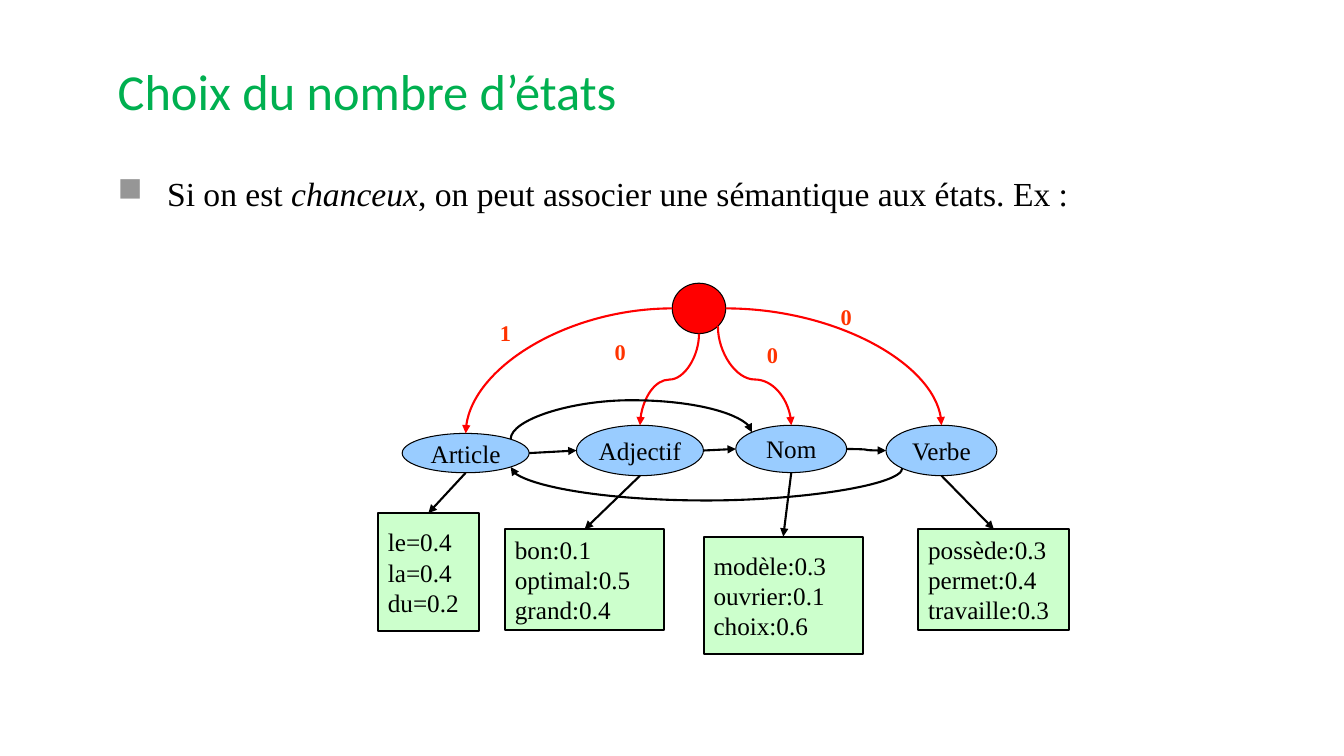
"""Build a slide showing a hidden Markov model whose states are parts of speech."""
from dataclasses import dataclass

from lxml.etree import SubElement
from pptx import Presentation
from pptx.dml.color import RGBColor
from pptx.enum.shapes import MSO_CONNECTOR, MSO_SHAPE
from pptx.enum.text import MSO_ANCHOR, MSO_AUTO_SIZE, PP_ALIGN
from pptx.oxml.ns import qn
from pptx.shapes.autoshape import Shape
from pptx.shapes.connector import Connector
from pptx.shapes.shapetree import SlideShapes
from pptx.text.text import TextFrame
from pptx.util import Pt


@dataclass(frozen=True)
class Theme:
    """Colours, fonts and type sizes."""
    title: str = "00B050"
    text: str = "000000"
    bullet: str = "969696"
    state: str = "99CCFF"
    start: str = "FF0000"
    emission: str = "CCFFCC"
    label: str = "FF3300"
    head_font: str = "Calibri"
    body_font: str = "Times New Roman"
    title_size: float = 36
    body_size: float = 24
    node_size: float = 18
    label_size: float = 16
    thin: float = 0.75
    thick: float = 1.5


@dataclass(frozen=True)
class Box:
    """A rectangle in points, with its text."""
    x: float
    y: float
    w: float
    h: float
    text: str = ""

    def at(self, fx: float, fy: float) -> tuple[float, float]:
        """Return the point at the given fractions of width and height."""
        return self.x + fx * self.w, self.y + fy * self.h


@dataclass(frozen=True)
class Curve:
    """A curved arrow; bend is the height it turns at, if it leaves vertically."""
    begin: tuple[float, float]
    end: tuple[float, float]
    color: str
    rot: int = 0
    flip: str = ""
    prst: str = "curvedConnector3"
    bend: float | None = None


THEME = Theme()
TOP, LEFT, BOTTOM, RIGHT = (0.5, 0), (0, 0.5), (0.5, 1), (1, 0.5)
NEAR, FAR = 0.146, 0.854

TITLE = Box(77, 37.4, 715.7, 60.5, "Choix du nombre d’états")
BODY = Box(77, 120.2, 762.5, 36.7)
BODY_RUNS = (("Si on est ", False), ("chanceux", True),
             (", on peut associer une sémantique aux états. Ex :", False))
START = Box(480.2, 202.3, 38.2, 36)
ARTICLE = Box(287.3, 309.6, 90.7, 28.1, "Article")
ADJECTIF = Box(411.8, 303.8, 90.7, 36, "Adjectif")
NOM = Box(525.6, 303.8, 79.2, 33.8, "Nom")
VERBE = Box(632.9, 303.8, 79.2, 36, "Verbe")
EMISSIONS = (
    (ARTICLE, Box(270, 366.5, 72, 84.2, "le=0.4\vla=0.4\vdu=0.2")),
    (ADJECTIF, Box(360.7, 378, 113.8, 72, "bon:0.1\voptimal:0.5\vgrand:0.4")),
    (NOM, Box(502.6, 383.3, 113.8, 84.2, "modèle:0.3\nouvrier:0.1\vchoix:0.6")),
    (VERBE, Box(655.9, 378, 108, 72, "possède:0.3\vpermet:0.4\ntravaille:0.3")),
)
LABELS = tuple(Box(x, y, 22.3, 26.6, text) for x, y, text in (
    (349.9, 224.6, "1"), (432, 238.3, "0"), (540.7, 239.8, "0"), (593.3, 213.1, "0")))
CURVES = (
    Curve(START.at(*RIGHT), VERBE.at(*TOP), THEME.start, prst="curvedConnector2"),
    Curve(START.at(*LEFT), ARTICLE.at(*TOP), THEME.start, 180, "V", "curvedConnector2"),
    Curve(START.at(*BOTTOM), ADJECTIF.at(*TOP), THEME.start, 90, bend=271.1),
    Curve(START.at(FAR, FAR), NOM.at(*TOP), THEME.start, 270, "H", bend=271.1),
    Curve(ARTICLE.at(FAR, NEAR), NOM.at(FAR - 0.708, NEAR), THEME.text, 270, bend=285.8),
    Curve(NOM.at(*RIGHT), VERBE.at(*LEFT), THEME.text),
    Curve(VERBE.at(NEAR, FAR), ARTICLE.at(FAR, FAR), THEME.text, 270, "V", bend=357.8),
)


def style_text(tf: TextFrame, size: float, color: str = THEME.text,
               font: str = THEME.body_font, bold: bool | None = None,
               align: PP_ALIGN = PP_ALIGN.LEFT) -> None:
    """Give every paragraph of a frame one font and alignment."""
    for p in tf.paragraphs:
        p.alignment = align
        p.font.name, p.font.size, p.font.bold = font, Pt(size), bold
        p.font.color.rgb = RGBColor.from_string(color)


def add_node(shapes: SlideShapes, box: Box, kind: MSO_SHAPE, fill: str,
             width: float, align: PP_ALIGN) -> Shape:
    """Draw a filled, outlined shape with its text."""
    sp = shapes.add_shape(kind, Pt(box.x), Pt(box.y), Pt(box.w), Pt(box.h))
    sp.shadow.inherit = False
    sp.fill.solid()
    sp.fill.fore_color.rgb = RGBColor.from_string(fill)
    sp.line.color.rgb = RGBColor.from_string(THEME.text)
    sp.line.width = Pt(width)
    if box.text:
        tf = sp.text_frame
        tf.text, tf.word_wrap, tf.vertical_anchor = box.text, False, MSO_ANCHOR.MIDDLE
        style_text(tf, THEME.node_size, align=align)
    return sp


def add_text(shapes: SlideShapes, box: Box, wrap: bool = True) -> TextFrame:
    """Add a text box and return its frame."""
    sp = shapes.add_textbox(Pt(box.x), Pt(box.y), Pt(box.w), Pt(box.h))
    tf = sp.text_frame
    tf.text, tf.word_wrap = box.text, wrap
    return tf


def add_arrow(shapes: SlideShapes, kind: MSO_CONNECTOR, begin: tuple[float, float],
              end: tuple[float, float], color: str = THEME.text) -> Connector:
    """Draw a connector with a triangular head at its end."""
    cx = shapes.add_connector(kind, *(Pt(v) for v in begin + end))
    cx.line.color.rgb = RGBColor.from_string(color)
    cx.line.width = Pt(THEME.thick)
    sp_pr = cx._element.spPr
    SubElement(sp_pr.find(qn("a:ln")), qn("a:tailEnd"), type="triangle")
    SubElement(sp_pr, qn("a:effectLst"))
    return cx


def add_curve(shapes: SlideShapes, curve: Curve) -> None:
    """Draw a curved arrow in its rotated frame."""
    (x1, y1), (x2, y2) = curve.begin, curve.end
    w, h = abs(x2 - x1), abs(y2 - y1)
    if curve.bend is not None:
        w, h = h, w
    mx, my = (x1 + x2) / 2, (y1 + y2) / 2
    cx = add_arrow(shapes, MSO_CONNECTOR.CURVE, (mx - w / 2, my - h / 2),
                   (mx + w / 2, my + h / 2), curve.color)
    sp_pr = cx._element.spPr
    xfrm, geom = sp_pr.find(qn("a:xfrm")), sp_pr.find(qn("a:prstGeom"))
    geom.set("prst", curve.prst)
    if curve.rot:
        xfrm.set("rot", str(curve.rot * 60000))
    if curve.flip:
        xfrm.set(f"flip{curve.flip}", "1")
    if curve.bend is not None:
        adj = round((curve.bend - y1) / (y2 - y1) * 100000)
        SubElement(geom.find(qn("a:avLst")), qn("a:gd"), name="adj1", fmla=f"val {adj}")


def add_heading(shapes: SlideShapes) -> None:
    """Add the title and the bulleted sentence."""
    tf = add_text(shapes, TITLE)
    tf.vertical_anchor = MSO_ANCHOR.MIDDLE
    tf.paragraphs[0].line_spacing = 0.9
    style_text(tf, THEME.title_size, THEME.title, THEME.head_font)
    tf = add_text(shapes, BODY)
    p = tf.paragraphs[0]
    for text, italic in BODY_RUNS:
        r = p.add_run()
        r.text, r.font.italic = text, italic
    p_pr = p._p.get_or_add_pPr()
    p_pr.set("marL", str(Pt(35.3)))
    p_pr.set("indent", str(Pt(-35.3)))
    SubElement(SubElement(p_pr, qn("a:buClr")), qn("a:srgbClr"), val=THEME.bullet)
    SubElement(p_pr, qn("a:buChar"), char="■")
    style_text(tf, THEME.body_size)


def main() -> None:
    """Build and save the slide."""
    prs = Presentation()
    prs.slide_width, prs.slide_height = Pt(960), Pt(540)
    shapes = prs.slides.add_slide(prs.slide_layouts[6]).shapes
    add_heading(shapes)
    add_node(shapes, START, MSO_SHAPE.OVAL, THEME.start, THEME.thin, PP_ALIGN.CENTER)
    for state, emission in EMISSIONS:
        add_node(shapes, state, MSO_SHAPE.OVAL, THEME.state, THEME.thin, PP_ALIGN.CENTER)
        sp = add_node(shapes, emission, MSO_SHAPE.RECTANGLE, THEME.emission,
                      THEME.thick, PP_ALIGN.LEFT)
        cx = add_arrow(shapes, MSO_CONNECTOR.STRAIGHT, state.at(*BOTTOM), emission.at(*TOP))
        cx.end_connect(sp, 0)
    for left, right in ((ARTICLE, ADJECTIF), (ADJECTIF, NOM)):
        add_arrow(shapes, MSO_CONNECTOR.STRAIGHT, left.at(*RIGHT), right.at(*LEFT))
    for curve in CURVES:
        add_curve(shapes, curve)
    for label in LABELS:
        tf = add_text(shapes, label, wrap=False)
        tf.auto_size = MSO_AUTO_SIZE.SHAPE_TO_FIT_TEXT
        style_text(tf, THEME.label_size, THEME.label, bold=True)
    prs.save("out.pptx")


if __name__ == "__main__":
    main()
